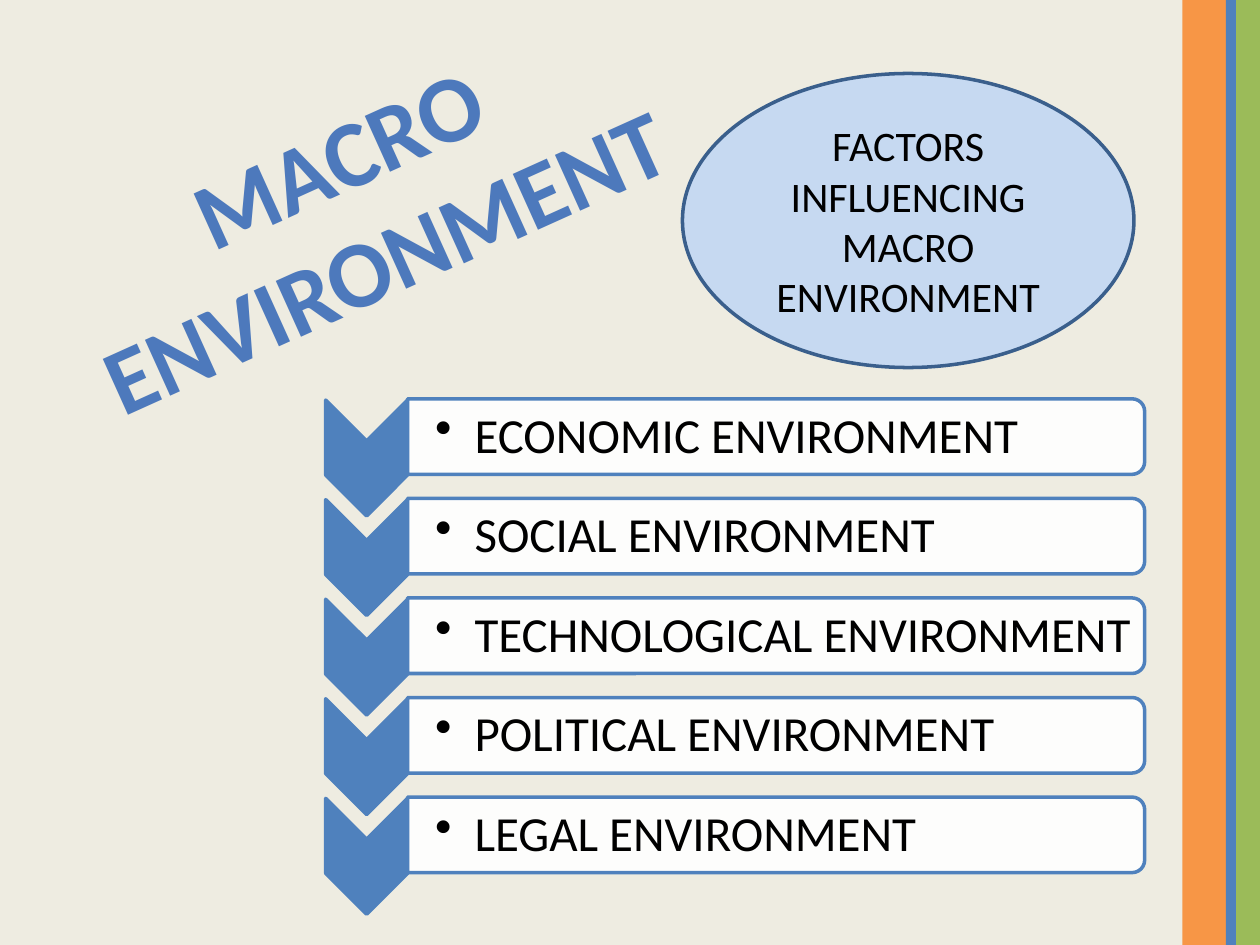
from lxml.etree import SubElement
from pptx import Presentation
from pptx.dml.color import RGBColor
from pptx.enum.shapes import MSO_SHAPE
from pptx.enum.text import MSO_ANCHOR, PP_ALIGN
from pptx.oxml.ns import qn
from pptx.util import Pt

COLOURS = {
    "background": "EEECE1", "orange": "F79646", "green": "9BBB59",
    "blue": "4F81BD", "white": "FFFFFF", "black": "000000",
    "pale blue": "C6D9F1", "dark blue": "3A5F8C", "title": "4D79BC",
}
FACTORS = ["ECONOMIC", "SOCIAL", "TECHNOLOGICAL", "POLITICAL", "LEGAL"]
ROW_STEP = 56.9


def colour(name):
    return RGBColor.from_string(COLOURS[name])


def write_text(frame, text, size, color="black", bold=False, align=None,
               anchor=None, insets=None, bullet_indent=None, line_spacing=None):
    frame.word_wrap = True
    if anchor is not None:
        frame.vertical_anchor = anchor
    if insets:
        (frame.margin_left, frame.margin_top,
         frame.margin_right, frame.margin_bottom) = map(Pt, insets)
    paragraph = frame.paragraphs[0]
    paragraph.alignment = align
    paragraph.line_spacing = line_spacing
    if bullet_indent:
        paragraph.level = 1
        properties = paragraph._p.get_or_add_pPr()
        properties.set("marL", str(Pt(bullet_indent)))
        properties.set("indent", str(-Pt(bullet_indent)))
        SubElement(properties, qn("a:buChar"), char="•")
    run = paragraph.add_run()
    run.text = text
    run.font.name = "Calibri"
    run.font.size = Pt(size)
    run.font.bold = bold
    run.font.color.rgb = colour(color)


class SlideBuilder:
    line_width = 2

    def __init__(self, slide):
        self.slide = slide
        slide.background.fill.solid()
        slide.background.fill.fore_color.rgb = colour("background")

    def shape(self, kind, box, fill, line=None, rotation=0, opacity=None, parent=None):
        """Draw a preset shape; box is its visible area, also after a quarter turn."""
        left, top, width, height = box
        if rotation in (90, 270):
            left, top = left + (width - height) / 2, top + (height - width) / 2
            width, height = height, width
        shapes = (parent or self.slide).shapes
        shape = shapes.add_shape(kind, *map(Pt, (left, top, width, height)))
        shape.rotation = rotation
        shape.shadow.inherit = False
        shape.fill.solid()
        shape.fill.fore_color.rgb = colour(fill)
        if opacity:
            solid_color = shape.fill._xPr.find(qn("a:solidFill"))[0]
            SubElement(solid_color, qn("a:alpha"), val=str(opacity * 1000))
        if line:
            shape.line.color.rgb = colour(line)
            shape.line.width = Pt(self.line_width)
        else:
            shape.line.fill.background()
        return shape

    def text_box(self, text, box, rotation=0, parent=None, **text_format):
        shapes = (parent or self.slide).shapes
        text_box = shapes.add_textbox(*map(Pt, box))
        text_box.rotation = rotation
        write_text(text_box.text_frame, text, **text_format)

    def factor_row(self, text, offset, group):
        self.shape(MSO_SHAPE.CHEVRON, (186.1, 228.6 + offset, 46.8, 66.2),
                   "blue", line="blue", rotation=90, parent=group)
        self.shape(MSO_SHAPE.ROUND_2_SAME_RECTANGLE, (232.9, 227.9 + offset, 421.2, 43.2),
                   "white", line="blue", rotation=90, opacity=90, parent=group)
        self.text_box(text, (232.9, 230.4 + offset, 419.8, 38.9), parent=group, size=28,
                      anchor=MSO_ANCHOR.MIDDLE, insets=(15.8, 1.4, 1.4, 1.4),
                      bullet_indent=22.5, line_spacing=0.9)


def main():
    presentation = Presentation()
    presentation.slide_width, presentation.slide_height = Pt(720), Pt(540)
    builder = SlideBuilder(presentation.slides.add_slide(presentation.slide_layouts[6]))

    for left, width, fill, rotation in [(675.7, 25.2, "orange", 270),
                                        (706.3, 13.7, "green", 270),
                                        (700.5, 5.8, "blue", 0)]:
        builder.shape(MSO_SHAPE.RECTANGLE, (left, 0, width, 540), fill, rotation=rotation)

    factor_list = builder.slide.shapes.add_group_shape()
    for index, factor in enumerate(FACTORS):
        builder.factor_row(f"{factor} ENVIRONMENT", index * ROW_STEP, factor_list)

    ellipse = builder.shape(MSO_SHAPE.OVAL, (390, 42, 258, 168), "pale blue", line="dark blue")
    write_text(ellipse.text_frame, "FACTORS INFLUENCING MACRO ENVIRONMENT", size=24,
               align=PP_ALIGN.CENTER, anchor=MSO_ANCHOR.MIDDLE)

    builder.text_box("MACRO ENVIRONMENT", (-61.2, 49.7, 535, 138.2), rotation=335.7,
                     size=54, color="title", bold=True, align=PP_ALIGN.CENTER)
    presentation.save("out.pptx")


if __name__ == "__main__":
    main()
